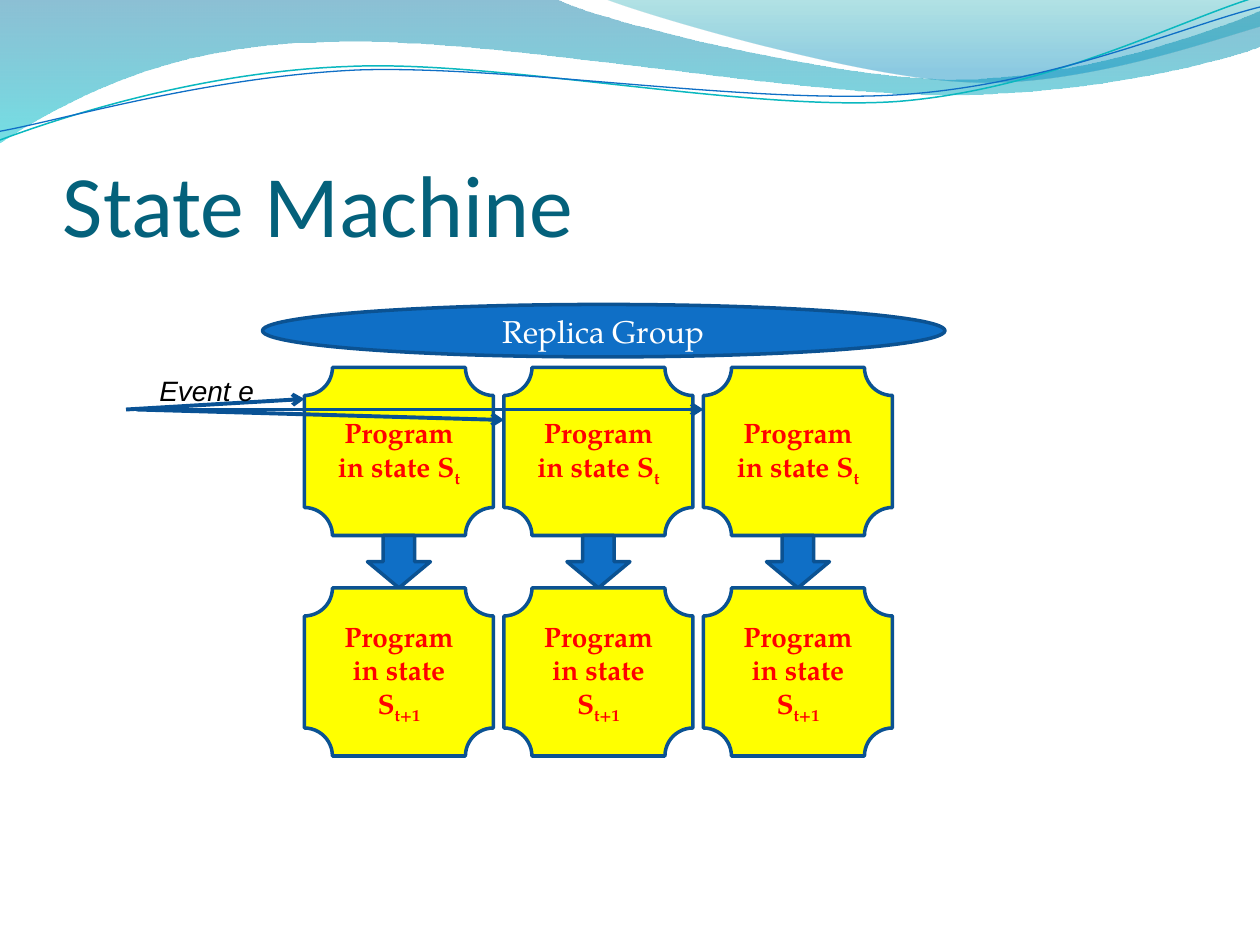
from lxml import etree
from pptx import Presentation
from pptx import util as u
from pptx.dml import color
from pptx.enum import shapes, text
from pptx.oxml import ns

Pt = u.Pt
HEX = {
    "title": "04617B", "blue": "0F6FC6", "edge": "0B5292", "arrow": "095295",
    "yellow": "FFFF00", "red": "FF0000", "white": "FFFFFF", "black": "000000",
    "teal": "0AB8BF", "sea": "0074A1", "aqua": "00C6CF", "green": "00A1A9", "sky": "008BBF",
}
SERIF = "TeX Gyre Pagella"
KINDS = shapes.MSO_SHAPE

# Each wave is a start point, then lines (2 numbers) and curves (6 numbers), in points.
BAND = [(0, -1), (317, -1), (343, 12, 478, 45, 546, 45), (614, 45, 690, 19, 720, 6.5),
        (721, 26), (708, 32, 626, 55, 537, 54), (448, 54, 275, 20, 185, 24.5),
        (93, 25, 33, 60, -1, 81.5), (0, -1)]
CREST = [(345, -1), (367, 8, 491, 45, 554, 47), (616, 49.5, 692, 23, 720, 15),
         (720, 0), (345, -1)]
RIPPLE = [(0, 80), (35, 67, 114, 41, 199, 37.5), (284, 34, 427, 64, 513, 57.5),
          (600, 51, 675, 11, 719, -1.5)]
STREAM = [(0, 75), (34, 69, 118, 44, 204, 40.5), (290, 37, 430, 60, 516, 54),
          (602, 48, 676, 15, 720, 4.5)]


def rgb(name):
    return color.RGBColor.from_string(HEX[name])


def add(parent, tag, **attrs):
    return etree.SubElement(parent, ns.qn(tag), attrs)


def write(para, words, font, size, ink, bold=False, slant=False, base=None):
    run = para.add_run()
    run.text = words
    face = run.font
    face.name, face.size, face.bold, face.italic = font, Pt(size), bold, slant
    face.color.rgb = rgb(ink)
    if base:
        face._element.set("baseline", str(base))


def add_shape(slide, kind, box, fill):
    shape = slide.shapes.add_shape(kind, *map(Pt, box))
    shape.shadow.inherit = False
    shape.fill.solid()
    shape.fill.fore_color.rgb = rgb(fill)
    shape.line.color.rgb = rgb("edge")
    shape.line.width = Pt(2)
    frame = shape.text_frame
    frame.word_wrap = True
    frame.vertical_anchor = text.MSO_ANCHOR.MIDDLE
    para = frame.paragraphs[0]
    para.alignment = text.PP_ALIGN.CENTER
    return para


def add_curve(slide, steps, closed):
    """Draw all points as lines, then join each curve's three lines into one Bezier."""
    nodes = [step[i:i + 2] for step in steps for i in range(0, len(step), 2)]
    form = slide.shapes.build_freeform(*nodes[0], scale=float(Pt(1)))
    form.add_line_segments(nodes[1:], close=closed)
    shape = form.convert_to_shape()
    shape.shadow.inherit = False
    lines = iter(list(shape._element.iter(ns.qn("a:lnTo"))))
    for step in steps[1:]:
        first = next(lines)
        if len(step) == 6:
            first.tag = ns.qn("a:cubicBezTo")
            for line in (next(lines), next(lines)):
                first.append(line[0])
                line.getparent().remove(line)
    return shape


def add_wave(slide, steps, stops):
    """Fill a closed wave from top to bottom; stops are place, colour and opacity."""
    shape = add_curve(slide, steps, True)
    shape.line.fill.background()
    shape.fill.gradient()
    grad = shape._element.spPr.find(ns.qn("a:gradFill"))
    for child in list(grad):
        grad.remove(child)
    group = add(grad, "a:gsLst")
    for place, name, alpha in stops:
        stop = add(group, "a:gs", pos=str(place * 1000))
        tint = add(stop, "a:srgbClr", val=HEX[name])
        add(tint, "a:alpha", val=str(alpha * 1000))
    add(grad, "a:lin", ang="5400000", scaled="0")


def add_stroke(slide, steps, ink, width):
    shape = add_curve(slide, steps, False)
    shape.fill.background()
    shape.line.color.rgb = rgb(ink)
    shape.line.width = Pt(width)


def add_header(slide):
    add_wave(slide, BAND, [(0, "sea", 45), (100, "aqua", 55)])
    add_wave(slide, CREST, [(0, "green", 30), (80, "sky", 45)])
    add_stroke(slide, RIPPLE, "teal", 0.85)
    add_stroke(slide, STREAM, "blue", 0.75)


def add_title(slide, box):
    frame = slide.shapes.add_textbox(*map(Pt, box)).text_frame
    frame.word_wrap = True
    frame.vertical_anchor = text.MSO_ANCHOR.BOTTOM
    frame.margin_left = frame.margin_right = frame.margin_bottom = 0
    write(frame.paragraphs[0], "State Machine", "Calibri", 50, "title")


def add_state(slide, box, index):
    para = add_shape(slide, KINDS.PLAQUE, box, "yellow")
    write(para, "Program", SERIF, 16, "red", bold=True)
    para.add_line_break()
    write(para, "in state S", SERIF, 16, "red", bold=True)
    write(para, index, SERIF, 16, "red", bold=True, base=-25000)


def add_column(slide, left, top):
    """Place one replica: its state before, an arrow, and its state after."""
    wide, high, gap = 108, 96, 30
    add_state(slide, (left, top, wide, high), "t")
    add_shape(slide, KINDS.DOWN_ARROW, (left + wide / 3, top + high, wide / 3, gap), "blue")
    add_state(slide, (left, top + high + gap, wide, high), "t+1")


def add_arrow(slide, start, end):
    line = slide.shapes.add_connector(shapes.MSO_CONNECTOR.STRAIGHT, *map(Pt, start + end))
    line.line.color.rgb = rgb("arrow")
    line.line.width = Pt(2.25)
    add(line.line._get_or_add_ln(), "a:tailEnd", type="arrow")
    add(line._element.spPr, "a:effectLst")


def add_event(slide, box):
    left, top = box[:2]
    for start, end in (((-12, 24), (90, 18)), ((-6, 24), (204, 30)), ((-12, 24), (318, 24))):
        add_arrow(slide, (left + start[0], top + start[1]), (left + end[0], top + end[1]))
    frame = slide.shapes.add_textbox(*map(Pt, box)).text_frame
    frame.word_wrap = True
    write(frame.paragraphs[0], "Event e", "Arial", 16, "black", slant=True)


def add_group(slide, left, top):
    para = add_shape(slide, KINDS.OVAL, (left, top, 390, 30), "blue")
    write(para, "Replica Group", SERIF, 18, "white")
    for col in range(3):
        add_column(slide, left + 24 + col * 114, top + 36)


def main():
    deck = Presentation()
    deck.slide_width, deck.slide_height = Pt(720), Pt(540)
    slide = deck.slides.add_slide(deck.slide_layouts[6])
    add_header(slide)
    add_title(slide, (36, 55.5, 654, 90))
    add_group(slide, 150, 174)
    add_event(slide, (84, 210, 78, 26.6))
    deck.save("out.pptx")


if __name__ == "__main__":
    main()
